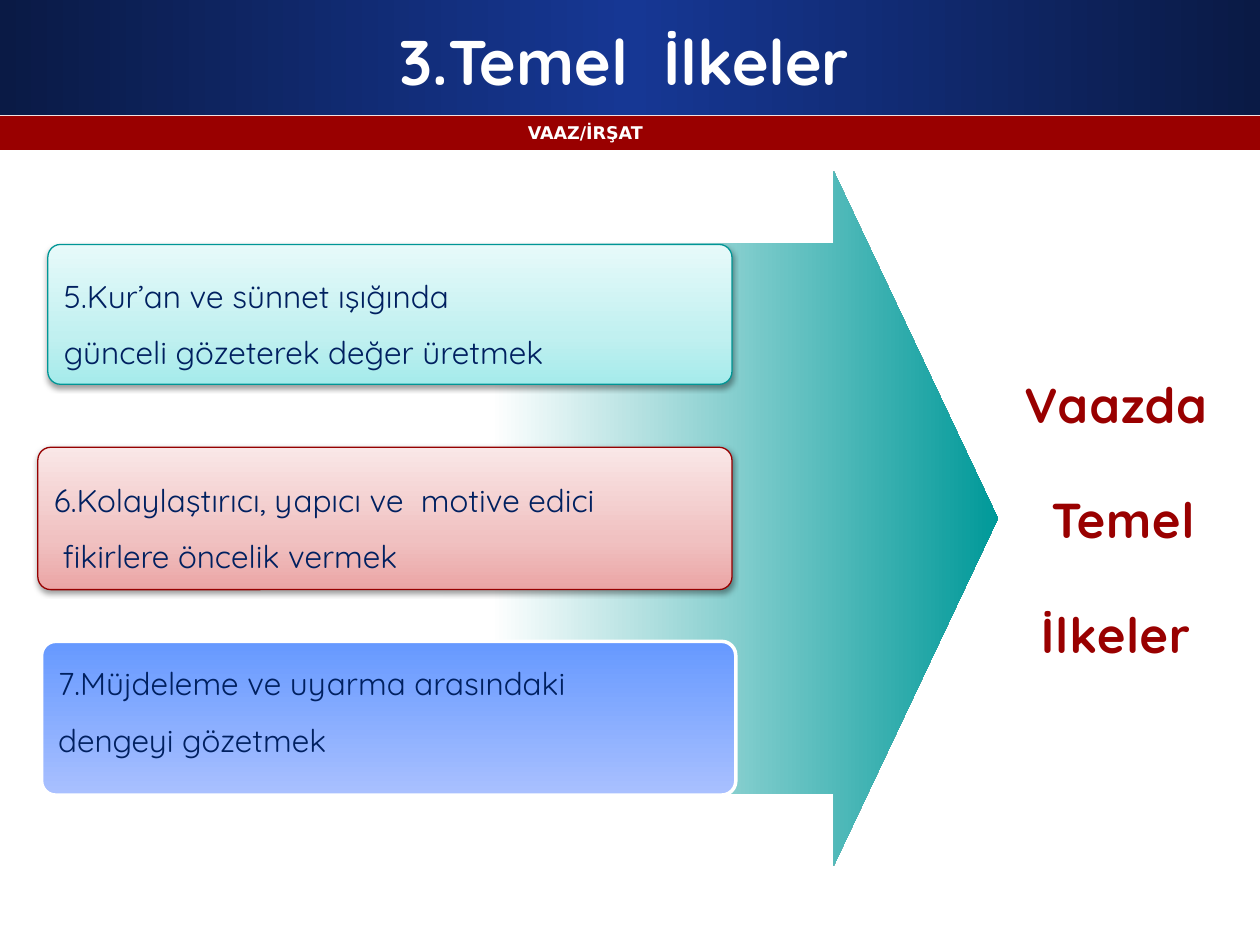
from lxml.etree import SubElement
from pptx import Presentation
from pptx.dml.color import RGBColor
from pptx.enum.shapes import MSO_SHAPE as Shape
from pptx.enum.text import MSO_ANCHOR as Anchor, PP_ALIGN as Align
from pptx.oxml.ns import qn
from pptx.util import Inches, Pt

WHITE = RGBColor(0xFF, 0xFF, 0xFF)
BLUE = RGBColor(0x16, 0x37, 0x94)
DARK_BLUE = RGBColor(0x0A, 0x1A, 0x45)
RED = RGBColor(0x99, 0x00, 0x00)
TEAL = RGBColor(0x00, 0x99, 0x99)
NAVY = RGBColor(0x00, 0x20, 0x60)
TEAL_LINE = RGBColor(0x00, 0x96, 0x96)
RED_LINE = RGBColor(0x96, 0x00, 0x00)
TEAL_STOPS = [(0, RGBColor(0xA5, 0xEB, 0xEB)), (35, RGBColor(0xC1, 0xF0, 0xF0)),
              (100, RGBColor(0xE7, 0xFA, 0xFA))]
RED_STOPS = [(0, RGBColor(0xEB, 0xA5, 0xA5)), (35, RGBColor(0xF0, 0xC1, 0xC1)),
             (100, RGBColor(0xFA, 0xE7, 0xE7))]
BLUE_STOPS = [(0, RGBColor(0x66, 0x99, 0xFF)), (100, RGBColor(0xA9, 0xC0, 0xFF))]


def write_text(frame, lines, size=18, color=NAVY, font="Quicksand", bold=False,
               align=Align.LEFT, anchor=Anchor.MIDDLE, line_spacing=None,
               gap=0, tracking=0, top=0.05):
    """Fill a text frame, one paragraph for each line."""
    frame.word_wrap = True
    frame.vertical_anchor = anchor
    frame.margin_top = Inches(top)
    for index, line in enumerate(lines):
        paragraph = frame.paragraphs[0] if index == 0 else frame.add_paragraph()
        paragraph.alignment = align
        if line_spacing:
            paragraph.line_spacing = line_spacing
        if gap and index:
            paragraph.space_before = Pt(gap)
        run = paragraph.add_run()
        run.text = line
        run.font.size, run.font.name, run.font.bold = Pt(size), font, bold
        run.font.color.rgb = color
        if tracking:
            run.font._element.set("spc", str(int(tracking * 100)))


class SlideBuilder:
    """Holds the current slide and the style of its elements."""
    corner = 0.091

    def __init__(self, slide):
        self.slide = slide

    def shape(self, kind, box, adjustments=(), color=None, stops=None, angle=0,
              line=None, line_width=0.75, shadow=False):
        shape = self.slide.shapes.add_shape(kind, *map(Inches, box))
        for index, value in enumerate(adjustments):
            shape.adjustments[index] = value
        if stops:
            self.gradient(shape, stops, angle)
        elif color is not None:
            shape.fill.solid()
            shape.fill.fore_color.rgb = color
        else:
            shape.fill.background()
        if line is None:
            shape.line.fill.background()
        else:
            shape.line.color.rgb = line
            shape.line.width = Pt(line_width)
        shape.shadow.inherit = False
        if shadow:
            self.drop_shadow(shape)
        return shape

    def gradient(self, shape, stops, angle):
        """Set the stops of a linear gradient; the angle runs clockwise."""
        shape.fill.gradient()
        shape.fill.gradient_angle = -angle % 360
        stop_list = shape._element.spPr.find(qn("a:gradFill")).find(qn("a:gsLst"))
        for stop in list(stop_list):
            stop_list.remove(stop)
        for position, color in stops:
            stop = SubElement(stop_list, qn("a:gs"), pos=str(position * 1000))
            SubElement(stop, qn("a:srgbClr"), val=str(color))

    def drop_shadow(self, shape):
        effects = shape._element.spPr.find(qn("a:effectLst"))
        outer = SubElement(effects, qn("a:outerShdw"), blurRad=str(Pt(3.1)),
                           dist=str(Pt(1.6)), dir="5400000", rotWithShape="0")
        color = SubElement(outer, qn("a:srgbClr"), val="000000")
        SubElement(color, qn("a:alpha"), val="38000")

    def text(self, box, lines, **text_format):
        text_box = self.slide.shapes.add_textbox(*map(Inches, box))
        write_text(text_box.text_frame, lines, **text_format)

    def card(self, box, lines, text_format=None, **look):
        shape = self.shape(Shape.ROUNDED_RECTANGLE, box, [self.corner], **look)
        write_text(shape.text_frame, lines, **(text_format or {"line_spacing": 1.5}))


def main():
    presentation = Presentation()
    presentation.slide_width, presentation.slide_height = Inches(10), Inches(7.5)
    builder = SlideBuilder(presentation.slides.add_slide(presentation.slide_layouts[6]))

    # Header bands
    builder.shape(Shape.RECTANGLE, (0, 0, 10, 0.91),
                  stops=[(0, DARK_BLUE), (50, BLUE), (100, DARK_BLUE)])
    builder.shape(Shape.RECTANGLE, (0, 0.92, 10, 0.27), color=RED)
    builder.text((0.02, 0.92, 9.25, 0.25), ["VAAZ/İRŞAT"], size=10, color=WHITE,
                 font="DejaVu Sans", bold=True, align=Align.CENTER, anchor=Anchor.TOP)
    builder.text((0.33, 0.17, 9.25, 0.62), ["3.Temel  İlkeler"], size=36,
                 color=WHITE, bold=True, align=Align.CENTER)

    # Arrow from the principles to the conclusion
    builder.shape(Shape.RIGHT_ARROW, (3.9, 1.36, 4.02, 5.51), [0.793, 0.324],
                  stops=[(0, WHITE), (100, TEAL)])
    builder.card((7.91, 2.18, 1.89, 3.88), ["Vaazda", " Temel", "İlkeler"],
                 {"size": 28, "color": RED, "bold": True, "align": Align.CENTER,
                  "gap": 32, "tracking": 0.5})

    # Principles
    builder.card((0.38, 1.94, 5.43, 1.11),
                 ["5.Kur’an ve sünnet ışığında", "günceli gözeterek değer üretmek"],
                 stops=TEAL_STOPS, angle=270, line=TEAL_LINE, shadow=True)
    builder.card((0.3, 3.55, 5.51, 1.13),
                 ["6.Kolaylaştırıcı, yapıcı ve  motive edici", " fikirlere öncelik vermek"],
                 stops=RED_STOPS, angle=270, line=RED_LINE, shadow=True)
    builder.card((0.33, 5.09, 5.51, 1.22),
                 ["7.Müjdeleme ve uyarma arasındaki", "dengeyi gözetmek"],
                 {"line_spacing": 1.5, "anchor": Anchor.TOP, "top": 0},
                 stops=BLUE_STOPS, angle=90, line=WHITE, line_width=2)

    presentation.save("out.pptx")


if __name__ == "__main__":
    main()
